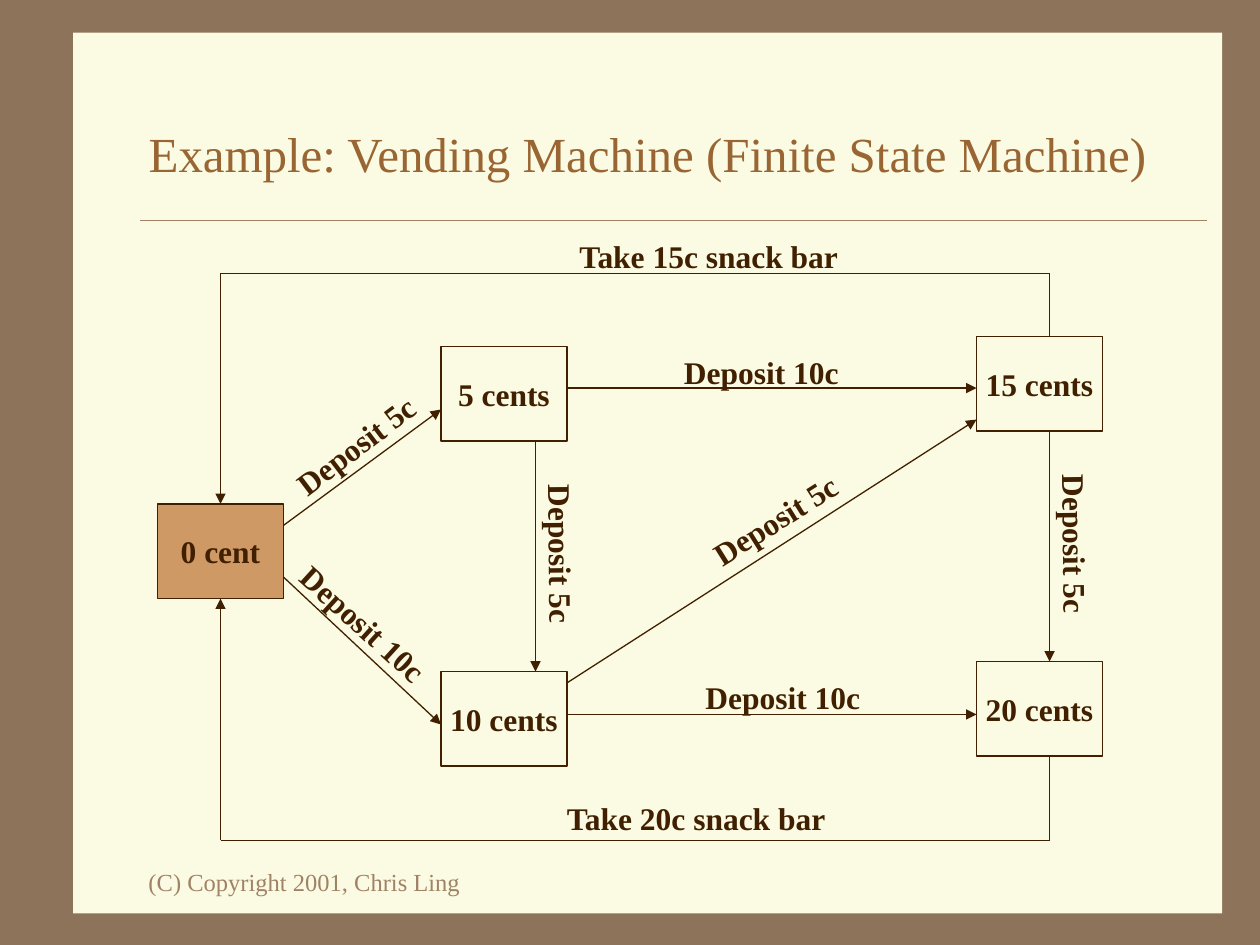
from lxml.etree import SubElement
from pptx import Presentation
from pptx.dml.color import RGBColor
from pptx.enum.shapes import MSO_CONNECTOR, MSO_SHAPE
from pptx.enum.text import MSO_ANCHOR, MSO_AUTO_SIZE, PP_ALIGN
from pptx.oxml.ns import qn
from pptx.util import Inches, Pt

INK, CREAM, TAN = "402000", "FBFAE2", "A08366"
rgb = RGBColor.from_string
LABEL = {"size": Pt(18), "bold": True}


def write(tf, text, color, fmt):
    tf.text = text
    font = tf.paragraphs[0].font
    font.name = "Times New Roman"
    font.color.rgb = rgb(color)
    for name, value in fmt.items():
        setattr(font, name, value)


def line(start, end, arrow=False, color=INK, width=0.75):
    c = s.shapes.add_connector(MSO_CONNECTOR.STRAIGHT,
                               *(Inches(v) for v in start + end))
    c.line.color.rgb = rgb(color)
    c.line.width = Pt(width)
    spPr = c._element.spPr
    if arrow:
        SubElement(spPr.find(qn("a:ln")), qn("a:tailEnd"), type="triangle")
    SubElement(spPr, qn("a:effectLst"))
    return c


prs = Presentation()
prs.slide_width, prs.slide_height = Inches(10), Inches(7.5)
s = prs.slides.add_slide(prs.slide_layouts[5])
s.background.fill.solid()
s.background.fill.fore_color.rgb = rgb("8C735A")

# Cream panel and rule under the title
panel = s.shapes.add_shape(MSO_SHAPE.RECTANGLE, Inches(0.58), Inches(0.26),
                           Inches(9.12), Inches(6.99))
panel.shadow.inherit = False
panel.fill.solid()
panel.fill.fore_color.rgb = rgb(CREAM)
panel.line.fill.background()
line((1.11, 1.75), (9.58, 1.75), color=TAN, width=0.25)

# Title, brought in front of the panel
title = s.shapes.title
title.left, title.top = Inches(1.08), Inches(0.75)
title.width, title.height = Inches(8.5), Inches(0.92)
tf = title.text_frame
write(tf, "Example: Vending Machine (Finite State Machine)", "996633",
      {"size": Pt(28)})
tf.auto_size = MSO_AUTO_SIZE.NONE
tf.vertical_anchor = MSO_ANCHOR.MIDDLE
tf.paragraphs[0].alignment = PP_ALIGN.LEFT
s.shapes._spTree.append(title._element)

# Copyright line
tb = s.shapes.add_textbox(Inches(1.08), Inches(6.83), Inches(2.75), Inches(0.33))
tb.text_frame.word_wrap = True
write(tb.text_frame, "(C) Copyright 2001, Chris Ling", TAN, {"size": Pt(14)})

# States
states = {}
for name, x, y, fill in [
    ("0 cent", 1.25, 4, "CE9964"),
    ("5 cents", 3.5, 2.75, CREAM),
    ("10 cents", 3.5, 5.33, CREAM),
    ("15 cents", 7.75, 2.67, CREAM),
    ("20 cents", 7.75, 5.25, CREAM),
]:
    sp = s.shapes.add_shape(MSO_SHAPE.RECTANGLE, Inches(x), Inches(y),
                            Inches(1), Inches(0.75))
    sp.shadow.inherit = False
    sp.fill.solid()
    sp.fill.fore_color.rgb = rgb(fill)
    sp.line.color.rgb = rgb(INK)
    sp.line.width = Pt(0.75)
    tf = sp.text_frame
    write(tf, name, INK, LABEL)
    tf.word_wrap = False
    tf.vertical_anchor = MSO_ANCHOR.MIDDLE
    tf.paragraphs[0].alignment = PP_ALIGN.CENTER
    states[name] = sp

# Deposit transitions
for start, end in [
    ((2.25, 4.17), (3.5, 3.25)),
    ((2.25, 4.58), (3.5, 5.75)),
    ((4.5, 3.08), (7.75, 3.08)),
    ((4.5, 5.67), (7.75, 5.67)),
    ((4.25, 3.5), (4.25, 5.33)),
    ((4.5, 5.42), (7.75, 3.33)),
    ((8.33, 3.42), (8.33, 5.25)),
]:
    line(start, end, arrow=True)

# Return paths to the start state: out, across, and back in
for y_out, y_across, y_in, site in [(6, 6.67, 4.75, 2), (2.67, 2.17, 4, 0)]:
    line((8.33, y_out), (8.33, y_across))
    line((8.33, y_across), (1.75, y_across))
    back = line((1.75, y_across), (1.75, y_in), arrow=True)
    back.end_connect(states["0 cent"], site)

# Transition labels
widths = {"Deposit 5c": 1.31, "Deposit 10c": 1.43,
          "Take 15c snack bar": 2.28, "Take 20c snack bar": 2.28}
for text, x, y, angle in [
    ("Deposit 5c", 2.17, 3.33, 322.8),
    ("Deposit 10c", 2.17, 4.75, 42.2),
    ("Deposit 10c", 5.33, 2.75, 0),
    ("Deposit 10c", 5.5, 5.33, 0),
    ("Deposit 5c", 3.8, 4.2, 89.5),
    ("Deposit 5c", 5.5, 3.92, 327.9),
    ("Deposit 5c", 7.88, 4.12, 89.4),
    ("Take 20c snack bar", 4.4, 6.29, 0),
    ("Take 15c snack bar", 4.5, 1.83, 0),
]:
    tb = s.shapes.add_textbox(Inches(x), Inches(y), Inches(widths[text]),
                              Inches(0.4))
    tb.rotation = angle
    tf = tb.text_frame
    write(tf, text, INK, LABEL)
    tf.word_wrap = False
    tf.auto_size = MSO_AUTO_SIZE.SHAPE_TO_FIT_TEXT

prs.save("out.pptx")
